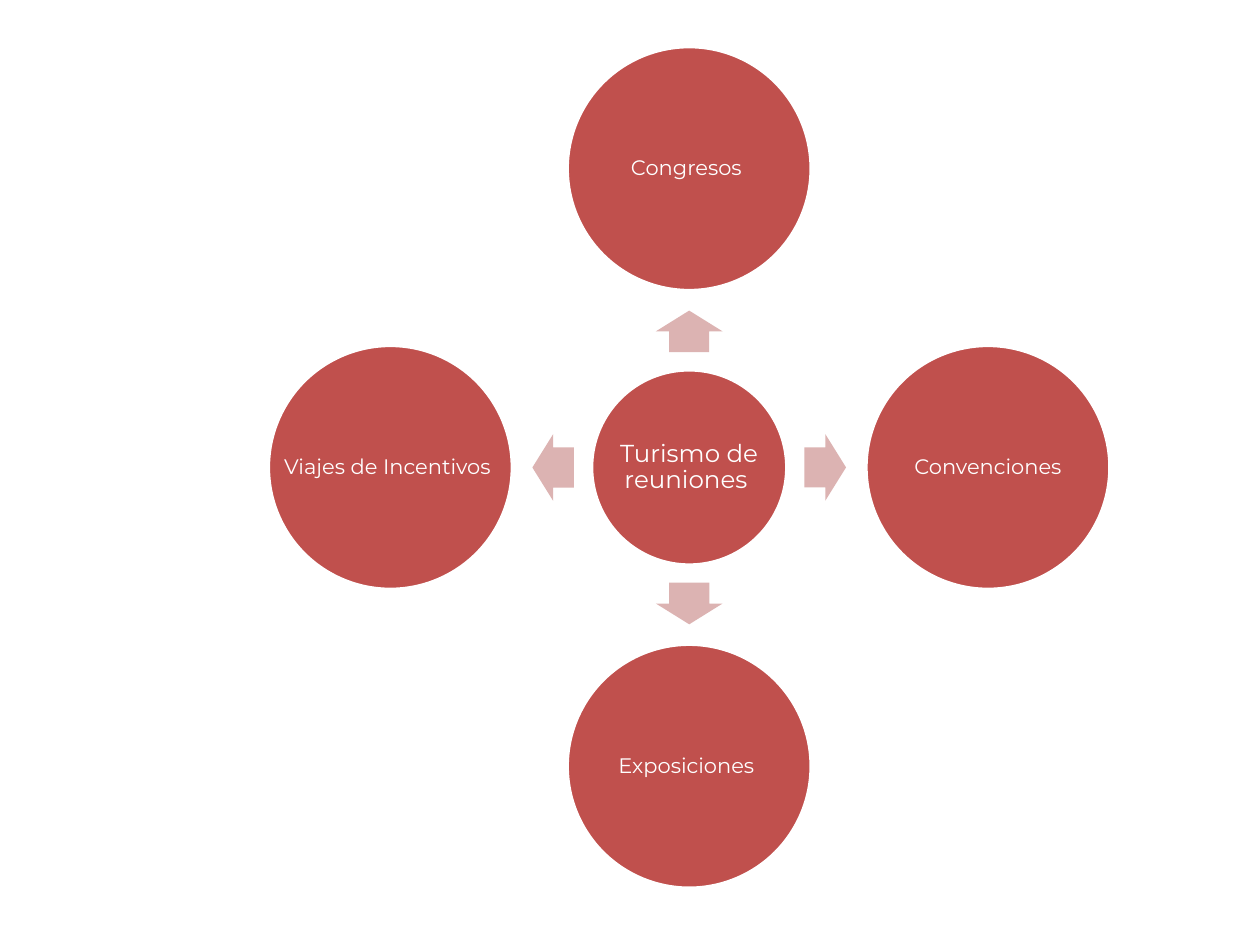
import math
from dataclasses import dataclass

from pptx import Presentation
from pptx.dml.color import RGBColor
from pptx.enum import shapes, text
from pptx.util import Inches, Pt


@dataclass(frozen=True)
class Theme:
    circle: RGBColor = RGBColor(0xC0, 0x50, 0x4D)
    arrow: RGBColor = RGBColor(0xDC, 0xB3, 0xB2)
    white: RGBColor = RGBColor(0xFF, 0xFF, 0xFF)
    font: str = "Montserrat"
    hub_size: int = 14
    topic_size: int = 12


THEME = Theme()
HUB = "Turismo de reuniones "
TOPICS = [
    ("Congresos ", 270),
    ("Convenciones", 0),
    ("Exposiciones ", 90),
    ("Viajes de Incentivos ", 180),
]


def centred_box(cx, cy, w, h):
    return [Inches(v) for v in (cx - w / 2, cy - h / 2, w, h)]


def add_shape(s, kind, box, fill):
    sp = s.shapes.add_shape(kind, *box)
    sp.shadow.inherit = False
    sp.fill.solid()
    sp.fill.fore_color.rgb = fill
    return sp


def add_text(s, box, content, *, size, color=THEME.white, font=THEME.font):
    tf = s.shapes.add_textbox(*box).text_frame
    tf.word_wrap = True
    tf.vertical_anchor = text.MSO_ANCHOR.MIDDLE
    tf.margin_left = tf.margin_right = Inches(0.02)
    tf.margin_top = tf.margin_bottom = Inches(0.02)
    p = tf.paragraphs[0]
    p.alignment = text.PP_ALIGN.CENTER
    p.line_spacing = 0.9
    r = p.add_run()
    r.text = content
    r.font.name = font
    r.font.size = Pt(size)
    r.font.color.rgb = color


def add_circle(s, cx, cy, diameter, label, size):
    box = centred_box(cx, cy, diameter, diameter)
    sp = add_shape(s, shapes.MSO_SHAPE.OVAL, box, THEME.circle)
    sp.line.color.rgb = THEME.white
    sp.line.width = Pt(2)
    add_text(s, box, label, size=size)


def add_arrow(s, cx, cy, angle):
    box = centred_box(cx, cy, 0.33, 0.53)
    sp = add_shape(s, shapes.MSO_SHAPE.RIGHT_ARROW, box, THEME.arrow)
    sp.adjustments[0] = 0.6
    sp.adjustments[1] = 0.5
    sp.line.fill.background()
    sp.rotation = angle


def add_radial_diagram(s, left, top, side):
    cx, cy = left + side / 2, top + side / 2
    topic = 0.29 * side
    orbit = (side - topic) / 2
    add_circle(s, cx, cy, 1.55, HUB, THEME.hub_size)
    for label, angle in TOPICS:
        dx, dy = math.cos(math.radians(angle)), math.sin(math.radians(angle))
        add_arrow(s, cx + 1.08 * dx, cy + 1.08 * dy, angle)
        add_circle(s, cx + orbit * dx, cy + orbit * dy, topic, label, THEME.topic_size)


def main():
    prs = Presentation()
    prs.slide_width, prs.slide_height = Inches(10), Inches(7.5)
    s = prs.slides.add_slide(prs.slide_layouts[6])
    add_radial_diagram(s, left=2.13, top=0.37, side=6.68)
    prs.save("out.pptx")


if __name__ == "__main__":
    main()
